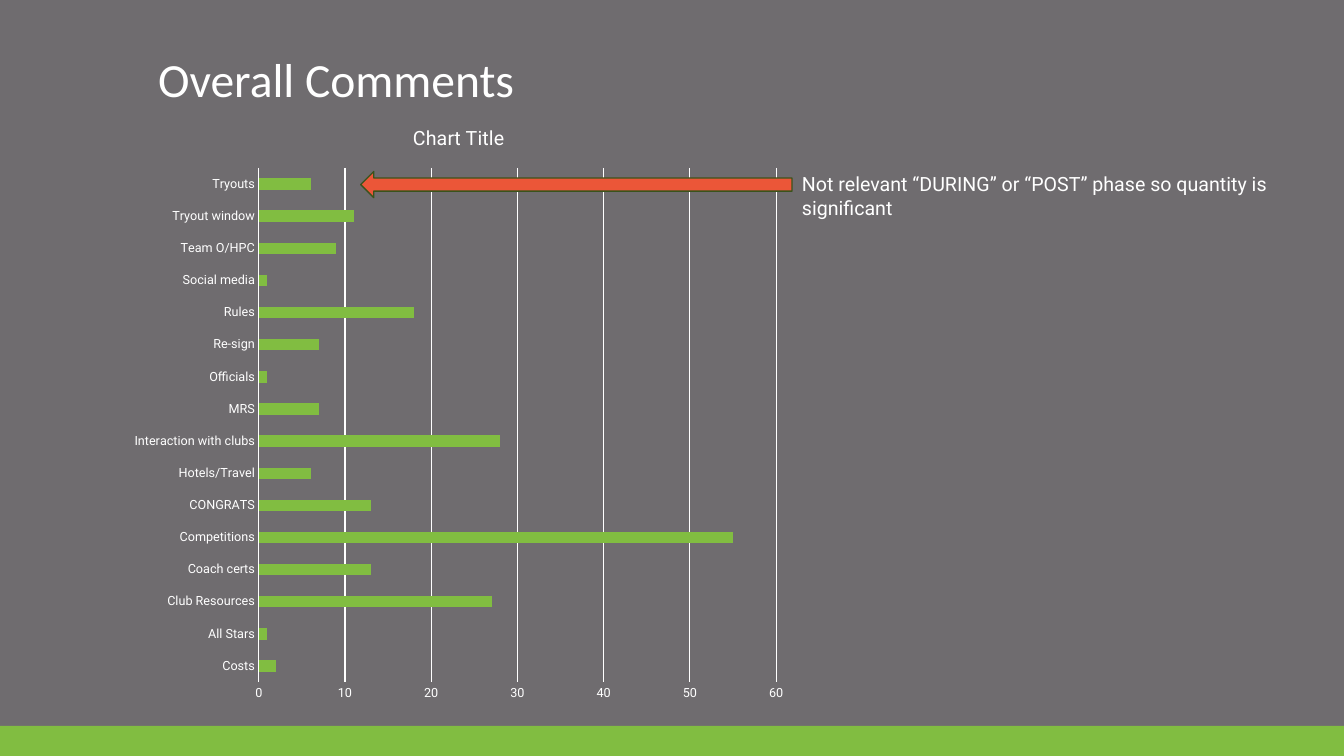
from lxml import etree
from pptx import Presentation
from pptx.chart.data import CategoryChartData
from pptx.dml.color import RGBColor
from pptx.enum.chart import XL_CHART_TYPE, XL_TICK_MARK
from pptx.enum.shapes import MSO_SHAPE
from pptx.enum.text import MSO_ANCHOR, PP_ALIGN
from pptx.oxml.ns import qn
from pptx.util import Cm, Pt

BAR_CLUSTERED = XL_CHART_TYPE.BAR_CLUSTERED
NO_TICK = XL_TICK_MARK.NONE
RECTANGLE, RIGHT_ARROW = MSO_SHAPE.RECTANGLE, MSO_SHAPE.RIGHT_ARROW
TOP, LEFT = MSO_ANCHOR.TOP, PP_ALIGN.LEFT

GREY = RGBColor(0x6F, 0x6C, 0x6F)
GREEN = RGBColor(0x81, 0xBD, 0x41)
DARK_GREEN = RGBColor(0x39, 0x53, 0x1C)
ORANGE = RGBColor(0xEB, 0x56, 0x38)
WHITE = RGBColor(0xFF, 0xFF, 0xFF)

TITLE_FONT, BODY_FONT = "Calibri", "Roboto"

COMMENTS = {
    "Costs": 2, "All Stars": 1, "Club Resources": 27, "Coach certs": 13,
    "Competitions": 55, "CONGRATS": 13, "Hotels/Travel": 6,
    "Interaction with clubs": 28, "MRS": 7, "Officials": 1, "Re-sign": 7,
    "Rules": 18, "Social media": 1, "Team O/HPC": 9, "Tryout window": 11,
    "Tryouts": 6,
}
PLOT_AREA = {"x": 0.204, "y": 0.107, "w": 0.766, "h": 0.843}


def style_font(font, size, name=BODY_FONT):
    font.size = Pt(size)
    font.name = name
    font.bold = False
    font.color.rgb = WHITE


def style_line(line, color, width):
    line.color.rgb = color
    line.width = Pt(width)


def set_title(s, text):
    title = s.shapes.title
    title.left, title.top, title.width, title.height = Cm(3.73), Cm(1.3), Cm(26.42), Cm(3.43)
    tf = title.text_frame
    tf.text = text
    tf.vertical_anchor = TOP
    p = tf.paragraphs[0]
    p.alignment = LEFT
    p.line_spacing = 0.9
    style_font(p.runs[0].font, 34, TITLE_FONT)


def add_block(s, kind, left, top, width, height, color):
    sp = s.shapes.add_shape(kind, left, top, width, height)
    sp.shadow.inherit = False
    sp.fill.solid()
    sp.fill.fore_color.rgb = color
    sp.line.fill.background()
    return sp


def add_note(s, text, left, top, width, height):
    tf = s.shapes.add_textbox(left, top, width, height).text_frame
    tf.word_wrap = True
    tf.text = text
    style_font(tf.paragraphs[0].runs[0].font, 14)


def place_plot(chart, area):
    plot_area = chart.plots[0]._element.getparent()
    for old in plot_area.findall(qn("c:layout")):
        plot_area.remove(old)
    layout = etree.Element(qn("c:layout"))
    manual = etree.SubElement(layout, qn("c:manualLayout"))
    settings = {"layoutTarget": "inner", "xMode": "edge", "yMode": "edge", **area}
    for tag, value in settings.items():
        etree.SubElement(manual, qn(f"c:{tag}")).set("val", str(value))
    plot_area.insert(0, layout)


def add_bar_chart(s, values, left, top, width, height):
    data = CategoryChartData()
    data.categories = list(values)
    data.add_series("Series 1", list(values.values()))
    chart = s.shapes.add_chart(BAR_CLUSTERED, left, top, width, height, data).chart
    style_font(chart.font, 10)
    chart.has_legend = False
    chart.has_title = True
    tf = chart.chart_title.text_frame
    tf.text = "Chart Title"
    style_font(tf.paragraphs[0].runs[0].font, 14)
    chart.chart_title.include_in_layout = False

    # Bars
    plot = chart.plots[0]
    plot.gap_width = 182
    plot.vary_by_categories = False
    fill = plot.series[0].format.fill
    fill.solid()
    fill.fore_color.rgb = GREEN

    # Axes
    for axis in (chart.category_axis, chart.value_axis):
        axis.major_tick_mark = axis.minor_tick_mark = NO_TICK
        style_font(axis.tick_labels.font, 9)
    style_line(chart.category_axis.format.line, WHITE, 0.75)
    value_axis = chart.value_axis
    value_axis.minimum_scale, value_axis.maximum_scale = 0, 60
    value_axis.major_unit = 10
    value_axis.format.line.fill.background()
    style_line(value_axis.major_gridlines.format.line, WHITE, 0.75)
    place_plot(chart, PLOT_AREA)


def main():
    prs = Presentation()
    prs.slide_width, prs.slide_height = Cm(33.87), Cm(19.05)
    s = prs.slides.add_slide(prs.slide_layouts[5])

    # Background and footer band
    s.background.fill.solid()
    s.background.fill.fore_color.rgb = GREY
    add_block(s, RECTANGLE, 0, Cm(18.29), prs.slide_width, Cm(0.76), GREEN)

    # Chart and title
    add_bar_chart(s, COMMENTS, Cm(3.05), Cm(2.59), Cm(17.02), Cm(15.37))
    set_title(s, "Overall Comments")

    # Arrow and note on the tryouts bar
    arrow = add_block(s, RIGHT_ARROW, Cm(9.09), Cm(4.32), Cm(10.87), Cm(0.66), ORANGE)
    arrow.rotation = 180
    style_line(arrow.line, DARK_GREEN, 1)
    add_note(s, "Not relevant “DURING” or “POST” phase so quantity is significant",
             Cm(19.96), Cm(4.22), Cm(12.9), Cm(0.86))

    prs.save("out.pptx")


if __name__ == "__main__":
    main()
